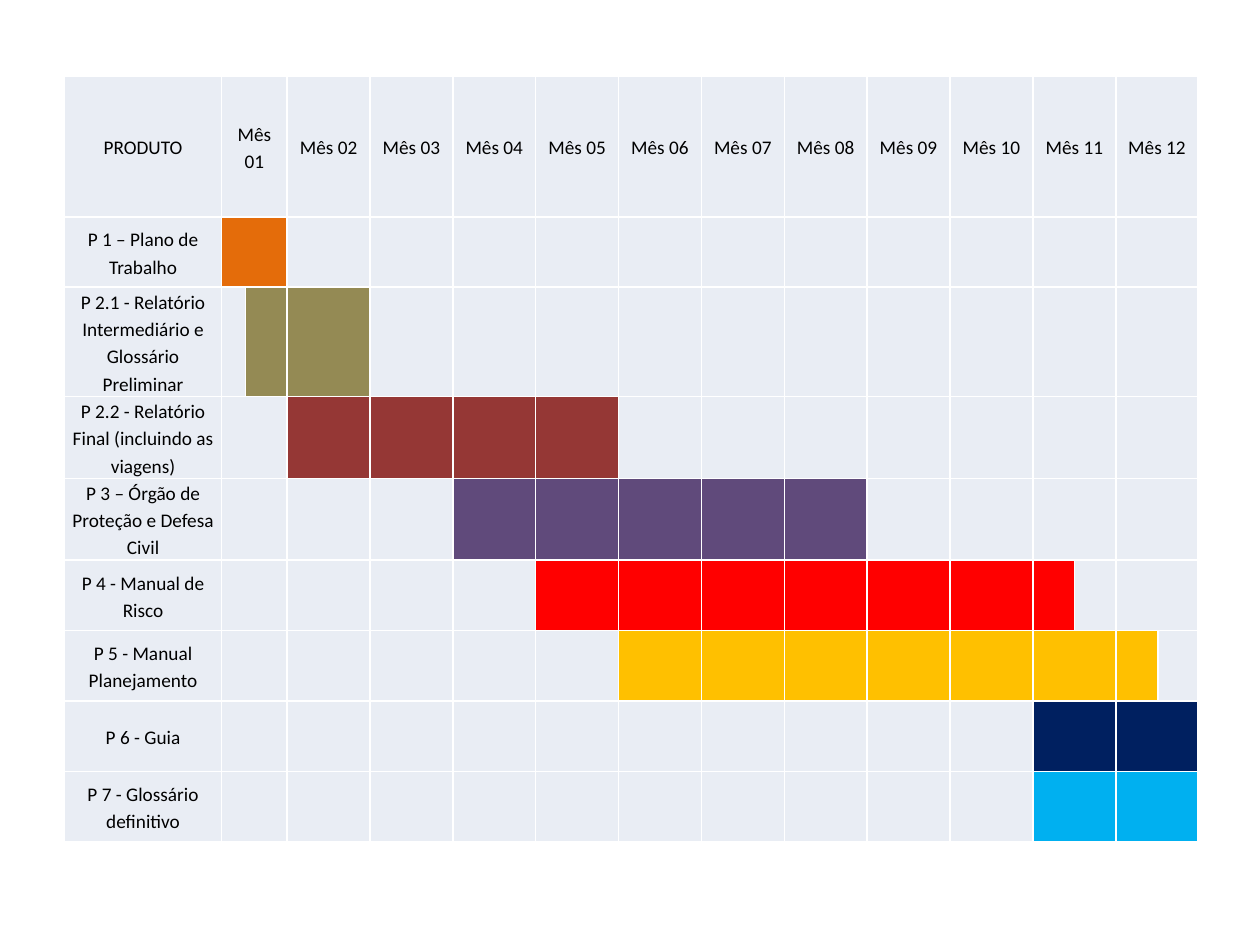
from lxml import etree
from pptx import Presentation
from pptx.dml.color import RGBColor
from pptx.enum.text import MSO_ANCHOR, PP_ALIGN
from pptx.oxml.ns import qn
from pptx.util import Cm, Pt

MIDDLE, CENTER = MSO_ANCHOR.MIDDLE, PP_ALIGN.CENTER
BACKGROUND, BORDER, TEXT = "E9EDF4", "FFFFFF", "000000"

# Product, start and end of its bar in elapsed months, bar colour
PRODUCTS = [
    ("P 1 – Plano de Trabalho", 0, 1, "E46C0A"),
    ("P 2.1 - Relatório Intermediário e Glossário Preliminar", 0.5, 2, "948A54"),
    ("P 2.2 - Relatório Final (incluindo as viagens)", 1, 5, "953735"),
    ("P 3 – Órgão de Proteção e Defesa Civil", 3, 8, "604A7B"),
    ("P 4 - Manual de Risco", 4, 10.5, "FF0000"),
    ("P 5 - Manual Planejamento", 5, 11.5, "FFC000"),
    ("P 6 - Guia", 10, 12, "002060"),
    ("P 7 - Glossário definitivo", 10, 12, "00B0F0"),
]
# Months 1, 11 and 12 take two columns each, so that a bar can end inside them
EDGES = [0, 0.5, *range(1, 11), 10.5, 11, 11.5, 12]
WIDTHS = [3.17, 0.48, 0.84] + [1.67] * 9 + [0.84, 0.84, 0.84, 0.81]
HEADER_HEIGHT, ROW_HEIGHT = 2.84, 1.42


def rgb(color):
    return RGBColor.from_string(color)


def add_borders(cell):
    properties = cell._tc.get_or_add_tcPr()
    for position, side in enumerate(("a:lnL", "a:lnR", "a:lnT", "a:lnB")):
        line = etree.Element(qn(side), w=str(Pt(1)))
        fill = etree.SubElement(line, qn("a:solidFill"))
        etree.SubElement(fill, qn("a:srgbClr"), val=BORDER)
        properties.insert(position, line)


def format_cell(cell, color):
    cell.fill.solid()
    cell.fill.fore_color.rgb = rgb(color)
    cell.vertical_anchor = MIDDLE
    cell.margin_left = cell.margin_right = Cm(0.13)
    cell.margin_top = cell.margin_bottom = 0
    add_borders(cell)


def write(cell, text):
    cell.text_frame.text = text
    paragraph = cell.text_frame.paragraphs[0]
    paragraph.alignment = CENTER
    paragraph.line_spacing = 1.15
    paragraph.space_after = Pt(10)
    font = paragraph.runs[0].font
    font.name, font.size, font.bold = "Calibri", Pt(11), False
    font.color.rgb = rgb(TEXT)


def main():
    prs = Presentation()
    prs.slide_width, prs.slide_height = Cm(25.4), Cm(19.05)
    slide = prs.slides.add_slide(prs.slide_layouts[6])

    heights = [HEADER_HEIGHT] + [ROW_HEIGHT] * len(PRODUCTS)
    schedule = slide.shapes.add_table(
        len(heights), len(WIDTHS), Cm(1.3), Cm(1.53),
        Cm(sum(WIDTHS)), Cm(sum(heights))).table
    schedule.first_row = schedule.horz_banding = False
    for column, width in zip(schedule.columns, WIDTHS):
        column.width = Cm(width)
    for row, height in zip(schedule.rows, heights):
        row.height = Cm(height)

    header = ("PRODUTO", 0, 0, BACKGROUND)
    for row, (label, start, end, color) in enumerate([header] + PRODUCTS):
        for column in range(len(WIDTHS)):
            in_bar = column > 0 and start <= EDGES[column - 1] < end
            format_cell(schedule.cell(row, column), color if in_bar else BACKGROUND)
        for column, edge in enumerate(EDGES):
            if edge % 1 and edge not in (start, end):
                schedule.cell(row, column).merge(schedule.cell(row, column + 1))
        write(schedule.cell(row, 0), label)

    for month in range(1, 13):
        write(schedule.cell(0, EDGES.index(month - 1) + 1), f"Mês {month:02}")

    prs.save("out.pptx")


if __name__ == "__main__":
    main()
